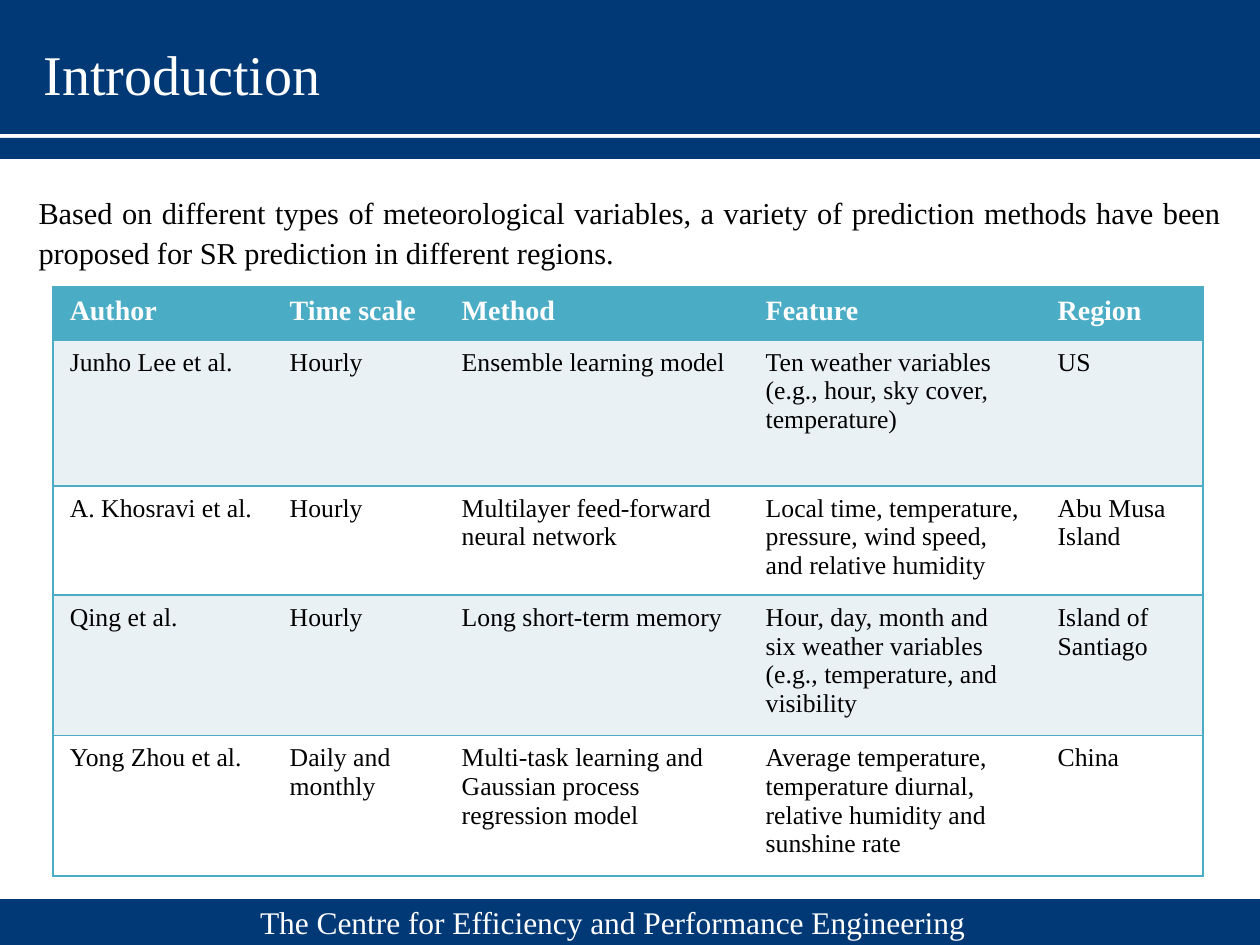
import pptx
import pptx.dml.color
import pptx.enum.shapes
import pptx.enum.text
import pptx.oxml.ns
import pptx.util
from lxml import etree

FONT = "Times New Roman"
NAVY, TEAL, PALE, WHITE, BLACK = "003976", "4BACC6", "E9F1F5", "FFFFFF", "000000"
EMU_PER_PX = 914400 // 168
SLIDE_SIZE = (1260, 945)

TITLE = "Introduction"
INTRO = ("Based on different types of meteorological variables, a variety of prediction "
         "methods have been proposed for SR prediction in different regions.")
FOOTER = "The Centre for Efficiency and Performance Engineering"
STUDIES = [
    ("Author", "Time scale", "Method", "Feature", "Region"),
    ("Junho Lee et al.", "Hourly", "Ensemble learning model",
     "Ten weather variables (e.g., hour, sky cover, temperature)", "US"),
    ("A. Khosravi et al.", "Hourly", "Multilayer feed-forward neural network",
     "Local time, temperature, pressure, wind speed, and relative humidity",
     "Abu Musa Island"),
    ("Qing et al.", "Hourly", "Long short-term memory",
     "Hour, day, month and six weather variables (e.g., temperature, and visibility",
     "Island of Santiago"),
    ("Yong Zhou et al.", "Daily and monthly",
     "Multi-task learning and Gaussian process regression model",
     "Average temperature, temperature diurnal, relative humidity and sunshine rate",
     "China"),
]

BANDS = [(0, 0, 1260, 134), (0, 138, 1260, 21), (0, 899, 1260, 46)]
TITLE_BOX = (27, 31, 500, 84)
INTRO_BOX = (22, 182, 1214, 91)
FOOTER_BOX = (175, 895, 875, 55)
TABLE_ORIGIN = (53, 287)
COLUMN_WIDTHS = [220, 172, 304, 292, 162]
ROW_HEIGHTS = [53, 146, 109, 140, 140]


def px(length):
    return pptx.util.Emu(length * EMU_PER_PX)


def color(value):
    return pptx.dml.color.RGBColor.from_string(value)


def write(text_frame, text, size, text_color, align="LEFT", bold=False):
    text_frame.text = text
    text_frame.word_wrap = True
    paragraph = text_frame.paragraphs[0]
    paragraph.alignment = getattr(pptx.enum.text.PP_ALIGN, align)
    font = paragraph.runs[0].font
    font.name, font.size, font.bold = FONT, pptx.util.Pt(size), bold
    font.color.rgb = color(text_color)
    return paragraph


def add_band(slide, box):
    band = slide.shapes.add_shape(
        pptx.enum.shapes.MSO_SHAPE.RECTANGLE, *map(px, box))
    band.shadow.inherit = False
    band.fill.solid()
    band.fill.fore_color.rgb = color(NAVY)
    band.line.fill.background()


def set_title(slide):
    title = slide.shapes.title
    title.left, title.top, title.width, title.height = map(px, TITLE_BOX)
    write(title.text_frame, TITLE, 24, WHITE)
    title.text_frame.vertical_anchor = pptx.enum.text.MSO_ANCHOR.MIDDLE
    slide.shapes._spTree.append(title._element)  # bring in front of the bands


def set_borders(cell, is_first, is_last):
    """Rule every row; close the sides only at the outer columns."""
    properties = cell._tc.get_or_add_tcPr()
    shown = {"lnL": is_first, "lnR": is_last, "lnT": True, "lnB": True}
    for tag, visible in shown.items():
        line = etree.SubElement(properties, pptx.oxml.ns.qn("a:" + tag),
                                w=str(pptx.util.Pt(1)))
        if visible:
            fill = etree.SubElement(line, pptx.oxml.ns.qn("a:solidFill"))
            etree.SubElement(fill, pptx.oxml.ns.qn("a:srgbClr"), val=TEAL)
        else:
            etree.SubElement(line, pptx.oxml.ns.qn("a:noFill"))


def add_studies_table(slide):
    size = (sum(COLUMN_WIDTHS), sum(ROW_HEIGHTS))
    table = slide.shapes.add_table(len(STUDIES), len(COLUMN_WIDTHS),
                                   *map(px, TABLE_ORIGIN + size)).table
    for column, width in zip(table.columns, COLUMN_WIDTHS):
        column.width = px(width)
    last_column = len(COLUMN_WIDTHS) - 1
    for row_index, (study, height) in enumerate(zip(STUDIES, ROW_HEIGHTS)):
        table.rows[row_index].height = px(height)
        is_header = row_index == 0
        row_fill = TEAL if is_header else PALE if row_index % 2 else WHITE
        for column_index, text in enumerate(study):
            cell = table.cell(row_index, column_index)
            set_borders(cell, column_index == 0, column_index == last_column)
            cell.fill.solid()
            cell.fill.fore_color.rgb = color(row_fill)
            write(cell.text_frame, text, 12 if is_header else 11,
                  WHITE if is_header else BLACK, bold=is_header)


def main():
    presentation = pptx.Presentation()
    presentation.slide_width, presentation.slide_height = map(px, SLIDE_SIZE)
    slide = presentation.slides.add_slide(presentation.slide_layouts[5])
    for box in BANDS:
        add_band(slide, box)
    set_title(slide)
    footer = slide.shapes.add_textbox(*map(px, FOOTER_BOX))
    write(footer.text_frame, FOOTER, 13.5, WHITE, "CENTER")
    intro = slide.shapes.add_textbox(*map(px, INTRO_BOX))
    write(intro.text_frame, INTRO, 13, BLACK, "JUSTIFY").line_spacing = 1.1
    add_studies_table(slide)
    presentation.save("out.pptx")


if __name__ == "__main__":
    main()
